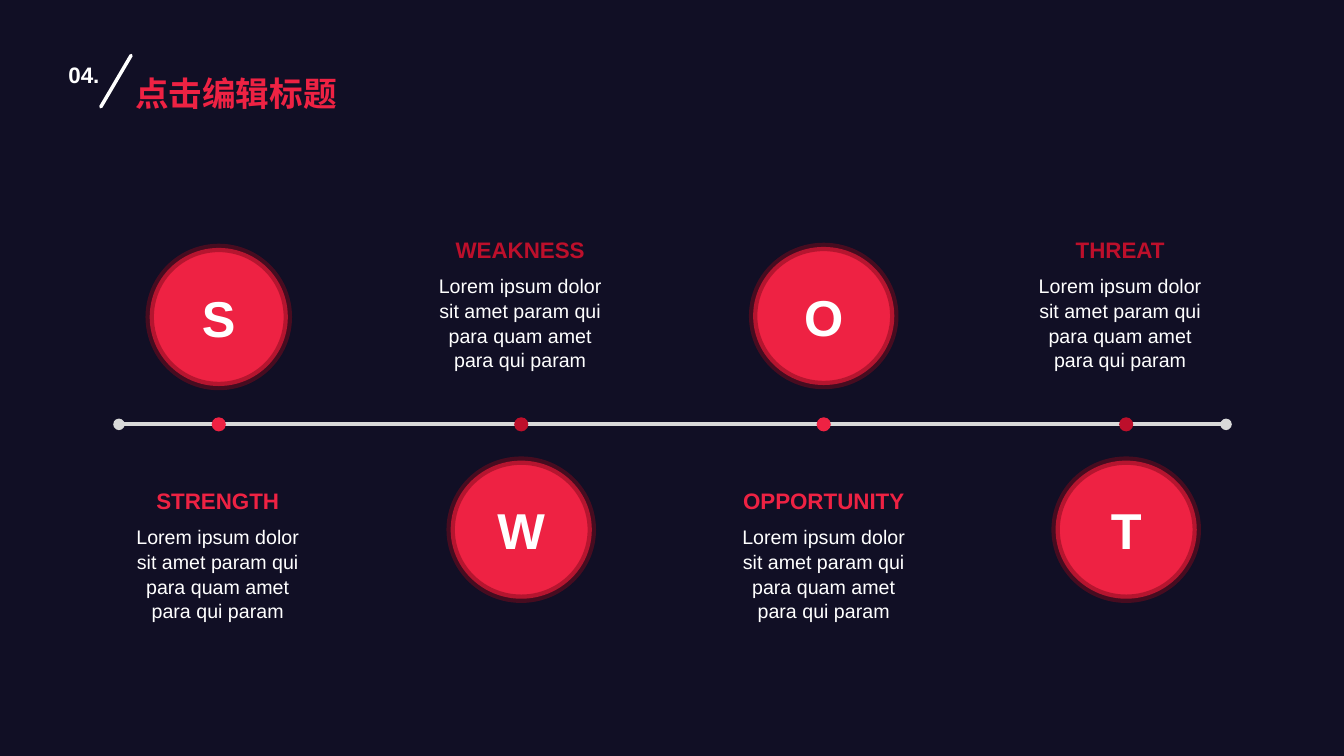
"""Build a SWOT timeline slide with alternating circles and captions."""
from dataclasses import dataclass

from lxml import etree
from pptx import Presentation
from pptx import util as u
from pptx.dml.color import RGBColor
from pptx.enum import shapes, text
from pptx.oxml.ns import qn

NAVY = RGBColor(0x11, 0x0F, 0x25)
RED = RGBColor(0xEE, 0x22, 0x43)
CRIMSON = RGBColor(0xBD, 0x0F, 0x2B)
MAROON = RGBColor(0x7E, 0x0A, 0x1D)
GREY = RGBColor(0xD9, 0xD9, 0xD9)
WHITE = RGBColor(0xFF, 0xFF, 0xFF)

LOREM = "Lorem ipsum dolor sit amet param qui para quam amet para qui param"
AXIS_Y = 4.21
FIRST_X, STEP_X = 2.17, 3.0
DOT = 0.14
CIRCLE_H = 1.37
TEXT_W, HEADING_H, BODY_H = 1.86, 0.37, 1.04


@dataclass(frozen=True)
class Stage:
    heading: str
    color: RGBColor
    text_x: float
    heading_y: float
    circle_y: float
    circle_w: float = 1.4


STAGES = [
    Stage("STRENGTH", RED, 2.16, 4.78, 2.46, 1.37),
    Stage("WEAKNESS", CRIMSON, 5.16, 2.29, 4.57),
    Stage("OPPORTUNITY", RED, 8.17, 4.78, 2.45),
    Stage("THREAT", CRIMSON, 11.11, 2.29, 4.57),
]


def write(sp, words: str, size: float, color: RGBColor, bold: bool = True,
          align=text.PP_ALIGN.CENTER, anchor=text.MSO_ANCHOR.TOP, spacing: float = 1.0) -> None:
    tf = sp.text_frame
    frame_format = {"word_wrap": True, "auto_size": text.MSO_AUTO_SIZE.NONE, "vertical_anchor": anchor}
    for name, value in frame_format.items():
        setattr(tf, name, value)
    p = tf.paragraphs[0]
    p.alignment = align
    p.line_spacing = spacing
    r = p.add_run()
    r.text = words
    for name, value in {"name": "Arial", "size": u.Pt(size), "bold": bold}.items():
        setattr(r.font, name, value)
    r.font.color.rgb = color


def add_box(s, x: float, y: float, w: float, h: float):
    return s.shapes.add_textbox(*map(u.Inches, (x, y, w, h)))


def add_ellipse(s, center_x: float, y: float, w: float, h: float, color: RGBColor):
    sp = s.shapes.add_shape(shapes.MSO_SHAPE.OVAL, *map(u.Inches, (center_x - w / 2, y, w, h)))
    sp.shadow.inherit = False
    sp.fill.solid()
    sp.fill.fore_color.rgb = color
    sp.line.fill.background()
    return sp


def add_line(s, x1: float, y1: float, x2: float, y2: float, color: RGBColor, width: float):
    line = s.shapes.add_connector(shapes.MSO_CONNECTOR.STRAIGHT, *map(u.Inches, (x1, y1, x2, y2)))
    line.line.color.rgb = color
    line.line.width = u.Pt(width)
    etree.SubElement(line._element.spPr, qn("a:effectLst"))
    return line.line._get_or_add_ln()


def add_stage(s, stage: Stage, x: float) -> None:
    add_ellipse(s, x, AXIS_Y - DOT / 2, DOT, DOT, stage.color)

    sp = add_ellipse(s, x, stage.circle_y, stage.circle_w, CIRCLE_H, RED)
    sp.line.color.rgb = MAROON
    sp.line.width = u.Pt(6)
    ring = sp.line._get_or_add_ln().find(".//" + qn("a:srgbClr"))
    etree.SubElement(ring, qn("a:alpha"), val="50000")
    write(sp, stage.heading[0], 36, WHITE, anchor=text.MSO_ANCHOR.MIDDLE)

    left = stage.text_x - TEXT_W / 2
    heading = add_box(s, left, stage.heading_y, TEXT_W, HEADING_H)
    write(heading, stage.heading, 16, stage.color, anchor=text.MSO_ANCHOR.MIDDLE)
    body = add_box(s, left, stage.heading_y + HEADING_H, TEXT_W, BODY_H)
    write(body, LOREM, 14, WHITE, bold=False, spacing=1.05)


def add_title(s) -> None:
    title = s.shapes.title
    frame = {"left": 1.24, "top": 0.59, "width": 2.43, "height": 0.54}
    for name, value in frame.items():
        setattr(title, name, u.Inches(value))
    write(title, "点击编辑标题", 24, RED, align=text.PP_ALIGN.LEFT, spacing=1.2)
    number = add_box(s, 0.58, 0.56, 0.62, 0.37)
    write(number, "04.", 16, WHITE, align=text.PP_ALIGN.LEFT)
    slash = add_line(s, 1.0, 1.06, 1.3, 0.55, WHITE, 2.5)
    slash.set("cap", "rnd")


def main() -> None:
    prs = Presentation()
    prs.slide_width, prs.slide_height = u.Inches(13.33), u.Inches(7.5)
    s = prs.slides.add_slide(prs.slide_layouts[5])
    s.background.fill.solid()
    s.background.fill.fore_color.rgb = NAVY
    add_title(s)
    axis = add_line(s, 1.18, AXIS_Y, 12.16, AXIS_Y, GREY, 2.75)
    for end in ("a:headEnd", "a:tailEnd"):
        etree.SubElement(axis, qn(end), type="oval")
    for i, stage in enumerate(STAGES):
        add_stage(s, stage, FIRST_X + i * STEP_X)
    prs.save("out.pptx")


if __name__ == "__main__":
    main()
